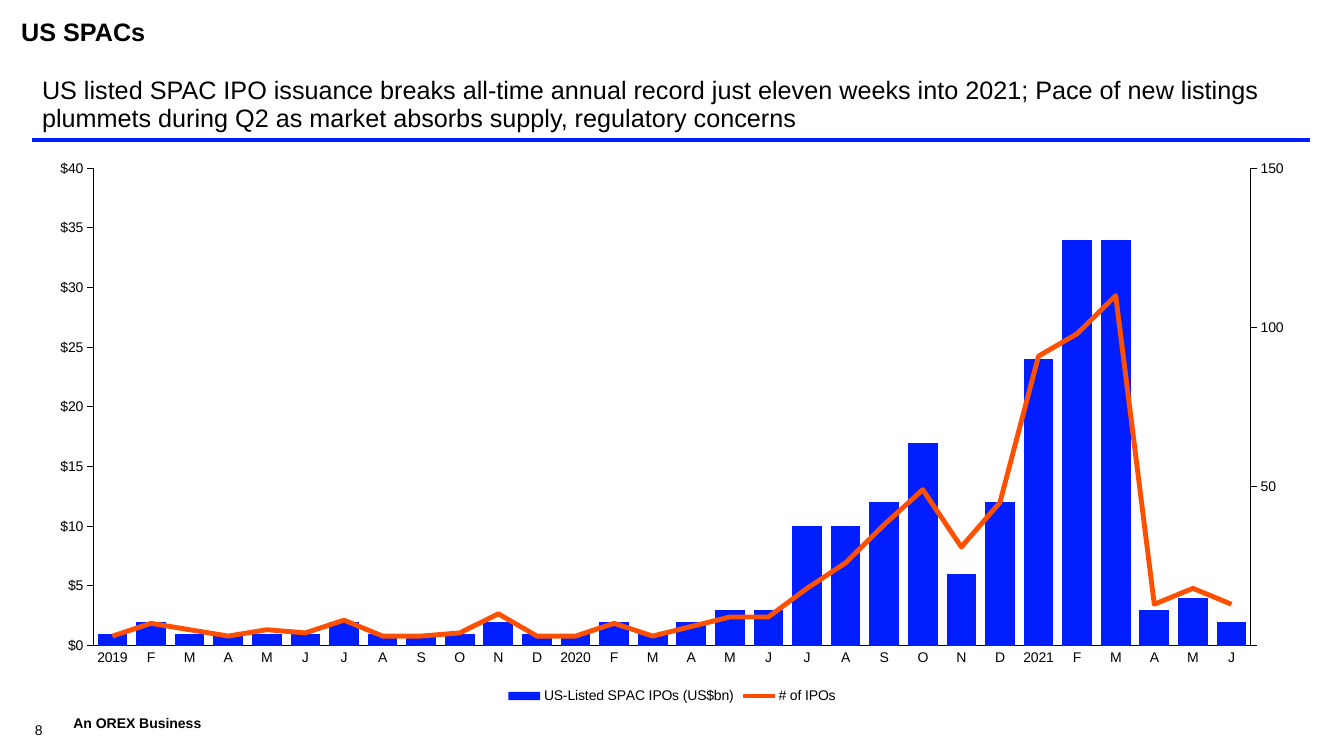
from copy import deepcopy

from lxml import etree
from pptx import Presentation
from pptx.chart.data import CategoryChartData
from pptx.dml.color import RGBColor
from pptx.enum.chart import XL_CHART_TYPE, XL_LEGEND_POSITION, XL_MARKER_STYLE, XL_TICK_MARK
from pptx.enum.shapes import MSO_CONNECTOR
from pptx.enum.text import MSO_ANCHOR, PP_ALIGN
from pptx.oxml import parse_xml
from pptx.oxml.ns import qn
from pptx.util import Cm, Pt

STACKED = XL_CHART_TYPE.COLUMN_STACKED
BOTTOM_LEGEND = XL_LEGEND_POSITION.BOTTOM
NO_MARKER = XL_MARKER_STYLE.NONE
TICK_NONE, TICK_OUT = XL_TICK_MARK.NONE, XL_TICK_MARK.OUTSIDE
STRAIGHT = MSO_CONNECTOR.STRAIGHT
MIDDLE, BOTTOM = MSO_ANCHOR.MIDDLE, MSO_ANCHOR.BOTTOM
LEFT = PP_ALIGN.LEFT
CHART_NS = "http://schemas.openxmlformats.org/drawingml/2006/chart"
BLACK, BLUE, ORANGE = "000000", "001EFF", "FF5000"


def color(value):
    return RGBColor.from_string(value)


def write(box, text, size, bold=False, anchor=MIDDLE):
    frame = box.text_frame
    frame.text = text
    frame.word_wrap = True
    frame.vertical_anchor = anchor
    para = frame.paragraphs[0]
    para.alignment = LEFT
    font = para.runs[0].font
    font.name, font.size, font.bold = "Arial", Pt(size), bold
    font.color.rgb = color(BLACK)
    return frame


deck = Presentation()
deck.slide_width, deck.slide_height = Cm(33.87), Cm(19.05)
page = deck.slides.add_slide(deck.slide_layouts[5])
shapes = page.shapes

title = shapes.title
title.left, title.top, title.width, title.height = Cm(0.28), Cm(0.38), Cm(16.94), Cm(0.81)
write(title, "US SPACs", 18, bold=True)

headline = shapes.add_textbox(Cm(0.81), Cm(1.83), Cm(32.21), Cm(1.65))
headline_frame = write(
    headline,
    "US listed SPAC IPO issuance breaks all-time annual record just eleven weeks into 2021; "
    "Pace of new listings plummets during Q2 as market absorbs supply, regulatory concerns",
    18,
)
headline_frame.paragraphs[0].line_spacing = 0.9

rule = shapes.add_connector(STRAIGHT, Cm(0.81), Cm(3.53), Cm(33.02), Cm(3.53))
rule.line.color.rgb = color(BLUE)
rule.line.width = Pt(3)
etree.SubElement(rule._element.spPr, qn("a:effectLst"))

months = list("FMAMJJASOND")
data = CategoryChartData()
data.categories = ["2019", *months, "2020", *months, "2021", *months[:5]]
data.add_series("US-Listed SPAC IPOs (US$bn)", [
    1, 2, 1, 1, 1, 1, 2, 1, 1, 1, 2, 1,
    1, 2, 1, 2, 3, 3, 10, 10, 12, 17, 6, 12,
    24, 34, 34, 3, 4, 2,
])
data.add_series("# of IPOs", [
    3, 7, 5, 3, 5, 4, 8, 3, 3, 4, 10, 3,
    3, 7, 3, 6, 9, 9, 18, 26, 38, 49, 31, 45,
    91, 98, 110, 13, 18, 13,
])
chart = shapes.add_chart(STACKED, Cm(1.01), Cm(3.72), Cm(31.85), Cm(14.12), data).chart
chart.has_title = False
chart.font.name, chart.font.size = "Arial", Pt(10)
chart.font.color.rgb = color(BLACK)
chart.has_legend = True
chart.legend.position = BOTTOM_LEGEND
chart.legend.include_in_layout = False

bars = chart.plots[0]
bars.gap_width, bars.overlap = 30, 100
bars.vary_by_categories = False
bars.series[0].format.fill.solid()
bars.series[0].format.fill.fore_color.rgb = color(BLUE)

amounts = chart.value_axis
amounts.minimum_scale, amounts.maximum_scale, amounts.major_unit = 0, 40, 5
amounts.has_major_gridlines = False
amounts.tick_labels.number_format = '"$"#,##0'
amounts.tick_labels.number_format_is_linked = False
for axis, tick in ((chart.category_axis, TICK_NONE), (amounts, TICK_OUT)):
    axis.major_tick_mark, axis.minor_tick_mark = tick, TICK_NONE
    axis.format.line.color.rgb = color(BLACK)
    axis.format.line.width = Pt(0.75)
    axis.tick_labels.font.name, axis.tick_labels.font.size = "Arial", Pt(10)
    axis.tick_labels.font.color.rgb = color(BLACK)

plot_area = chart._chartSpace.chart.plotArea
bar_group = plot_area.find(qn("c:barChart"))
count_series = bar_group.findall(qn("c:ser"))[1]
invert = count_series.find(qn("c:invertIfNegative"))
if invert is not None:
    count_series.remove(invert)
line_group = parse_xml(
    f'<c:lineChart xmlns:c="{CHART_NS}"><c:grouping val="standard"/><c:varyColors val="0"/>'
    '<c:marker val="1"/><c:axId val="5001"/><c:axId val="5002"/></c:lineChart>'
)
line_group.insert(2, count_series)
bar_group.addnext(line_group)

month_axis, amount_axis = plot_area.find(qn("c:catAx")), plot_area.find(qn("c:valAx"))
hidden_axis, count_axis = deepcopy(month_axis), deepcopy(amount_axis)
amount_axis.addnext(count_axis)
count_axis.addnext(hidden_axis)
for axis, settings in (
    (hidden_axis, {"axId": "5001", "crossAx": "5002", "delete": "1"}),
    (count_axis, {"axId": "5002", "crossAx": "5001", "axPos": "r", "crosses": "max",
                  "scaling/c:max": "150", "majorUnit": "50"}),
):
    for name, value in settings.items():
        axis.find("c:" + name, {"c": CHART_NS}).set("val", value)
count_axis.find(qn("c:numFmt")).set("formatCode", "#,##0;;")

counts = chart.plots[1].series[0]
counts.smooth = False
counts.marker.style = NO_MARKER
counts.format.line.color.rgb = color(ORANGE)
counts.format.line.width = Pt(3.5)

old_layout = plot_area.find(qn("c:layout"))
if old_layout is not None:
    plot_area.remove(old_layout)
frame_values = {"x": 0.042, "y": 0.037, "w": 0.916, "h": 0.852}
sizes = "".join(f'<c:{key} val="{value}"/>' for key, value in frame_values.items())
plot_area.insert(0, parse_xml(
    f'<c:layout xmlns:c="{CHART_NS}"><c:manualLayout><c:layoutTarget val="inner"/>'
    f'<c:xMode val="edge"/><c:yMode val="edge"/>{sizes}</c:manualLayout></c:layout>'
))

business = shapes.add_textbox(Cm(1.6), Cm(17.88), Cm(6.05), Cm(0.69))
write(business, "An OREX Business", 10, bold=True)

number = shapes.add_textbox(Cm(0.88), Cm(17.92), Cm(1.52), Cm(0.69))
number_frame = write(number, "8", 10, anchor=BOTTOM)
number_frame.margin_left = number_frame.margin_right = 0
number_frame.margin_top = number_frame.margin_bottom = 0

deck.save("out.pptx")
